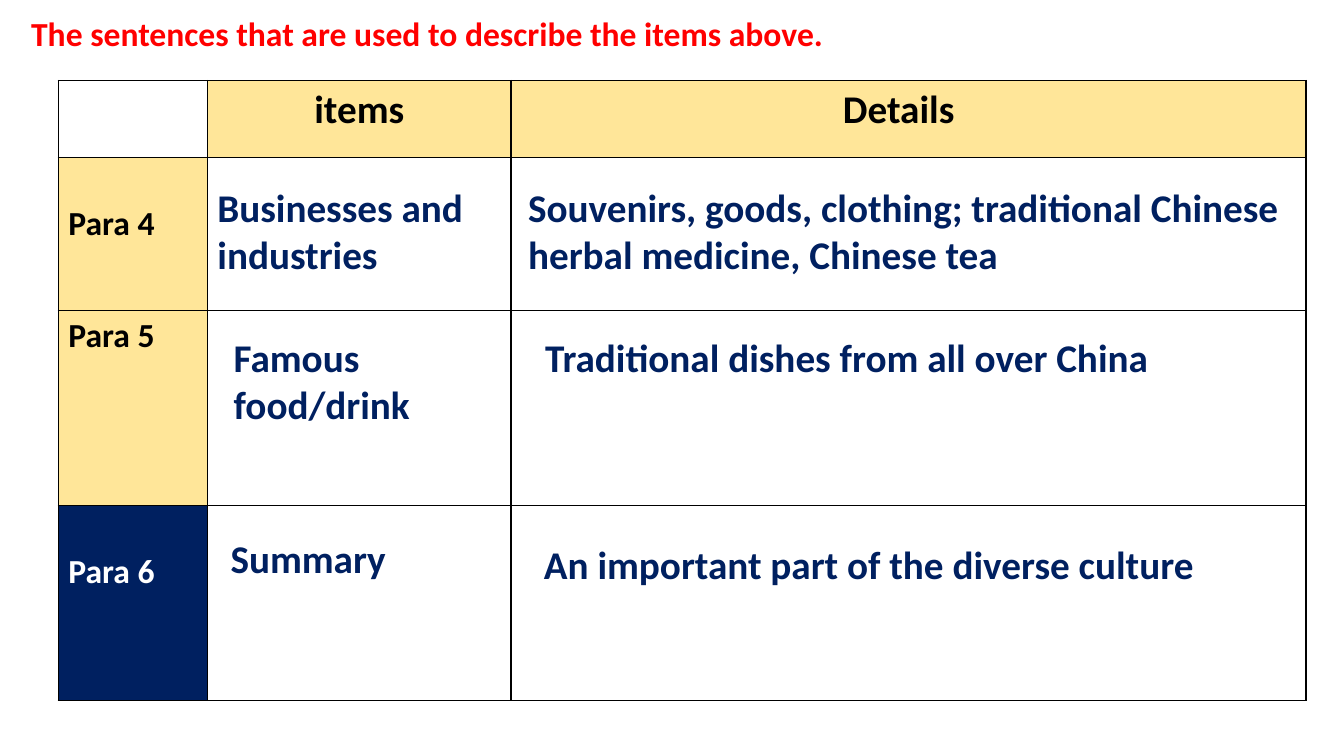
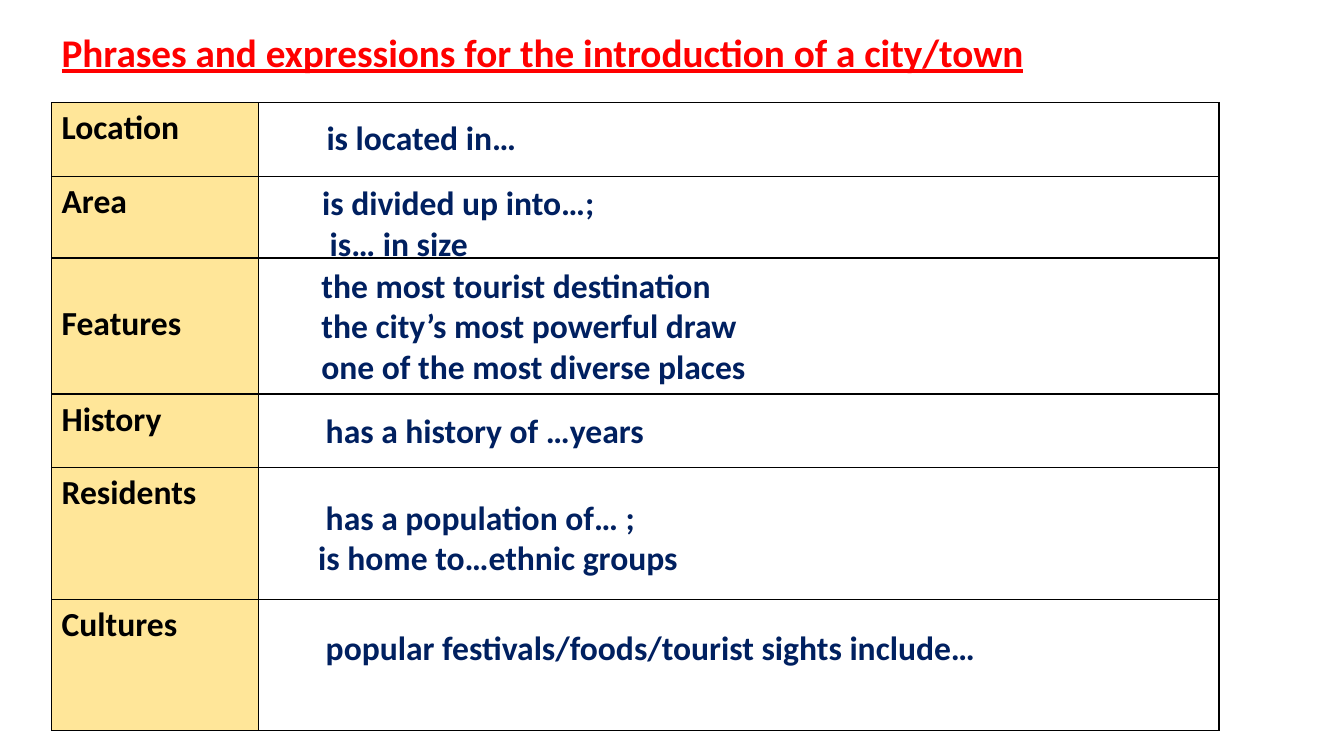
from itertools import product

from lxml.etree import SubElement
from pptx import Presentation
from pptx.dml.color import RGBColor
from pptx.enum.text import MSO_ANCHOR as Anchor
from pptx.enum.text import MSO_AUTO_SIZE as Fit
from pptx.enum.text import PP_ALIGN as Align
from pptx.oxml.ns import qn
from pptx.util import Cm, Pt

RED = RGBColor(0xFF, 0x00, 0x00)
NAVY = RGBColor(0x00, 0x20, 0x60)
SAND = RGBColor(0xFF, 0xE6, 0x99)
BLACK = RGBColor(0x00, 0x00, 0x00)
WHITE = RGBColor(0xFF, 0xFF, 0xFF)
FONT = "Calibri"
DROP = 1.16


def write(frame, text, size=24, color=NAVY, align=Align.LEFT, line=False, shifts=()):
    frame.word_wrap = True
    for i, words in enumerate(text.split("\n")):
        para = frame.paragraphs[0] if i == 0 else frame.add_paragraph()
        para.alignment = align
        if i < len(shifts):
            para._p.get_or_add_pPr().set("marL", str(Cm(shifts[i])))
        run = para.add_run()
        run.text = words
        font = run.font
        font.name, font.size, font.bold = FONT, Pt(size), True
        font.underline = line
        font.color.rgb = color


def add_title(slide, box, text, **style):
    title = slide.shapes.title
    title.left, title.top, title.width, title.height = map(Cm, box)
    frame = title.text_frame
    frame.auto_size = Fit.NONE
    frame.vertical_anchor = Anchor.TOP
    write(frame, text, color=RED, **style)


def add_edges(cell):
    props = cell._tc.get_or_add_tcPr()
    for side in ("lnL", "lnR", "lnT", "lnB"):
        edge = SubElement(props, qn("a:" + side), w=str(Pt(1)))
        fill = SubElement(edge, qn("a:solidFill"))
        SubElement(fill, qn("a:srgbClr"), val=str(BLACK))


def add_grid(slide, left, top, cols, rows):
    size = map(Cm, (left, top, sum(cols), sum(rows)))
    grid = slide.shapes.add_table(len(rows), len(cols), *size).table
    grid.first_row = grid.horz_banding = False
    for col, width in zip(grid.columns, cols):
        col.width = Cm(width)
    for row, height in zip(grid.rows, rows):
        row.height = Cm(height)
    for r, c in product(range(len(rows)), range(len(cols))):
        cell = grid.cell(r, c)
        add_edges(cell)
        cell.fill.background()
    return grid


def add_label(cell, text, fill=SAND, drop=0, **style):
    cell.fill.solid()
    cell.fill.fore_color.rgb = fill
    cell.margin_top = Cm(drop)
    write(cell.text_frame, text, **{"color": BLACK, **style})


def add_notes(slide, left, top, notes, size):
    for x, y, width, height, text, *shifts in notes:
        box = slide.shapes.add_textbox(Cm(left + x), Cm(top + y), Cm(width), Cm(height))
        write(box.text_frame, text, size=size, shifts=shifts)
        box.text_frame.auto_size = Fit.SHAPE_TO_FIT_TEXT


def add_items(slide, left, top):
    add_title(slide, (0.53, 0.2, 26.26, 1.27),
              "The sentences that are used to describe the items above.")
    grid = add_grid(slide, left, top, (3.76, 7.65, 20.03), (1.93, 3.86, 4.91, 4.92))
    for col, text in enumerate(("items", "Details"), 1):
        add_label(grid.cell(0, col), text, drop=0.13, size=28, align=Align.CENTER)
    grid.cell(0, 2).margin_right = Cm(0.75)
    add_label(grid.cell(1, 0), "Para 4", drop=DROP)
    add_label(grid.cell(2, 0), "Para 5", drop=0.13)
    add_label(grid.cell(3, 0), "Para 6", drop=DROP, fill=NAVY, color=WHITE)
    add_notes(slide, left, top, (
        (3.76, 2.47, 7.52, 2.64, "Businesses and industries"),
        (11.59, 2.47, 20.04, 2.64,
         "Souvenirs, goods, clothing; traditional Chinese herbal medicine, Chinese tea"),
        (4.17, 6.25, 6.83, 2.64, "Famous food/drink"),
        (12.02, 6.25, 17.98, 1.45, "Traditional dishes from all over China"),
        (4.09, 11.31, 6.83, 1.45, "Summary"),
        (11.99, 11.46, 18.06, 1.45, "An important part of the diverse culture"),
    ), 28)


def add_phrases(slide, left, top):
    add_title(slide, (left, 0.58, 31.04, 1.45),
              "Phrases and expressions for the introduction of a city/town",
              size=28, line=True)
    grid = add_grid(slide, left, top, (5.21, 24.21), (1.85, 2.06, 3.43, 1.85, 3.33, 3.3))
    names = ("Location", "Area", "Features", "History", "Residents", "Cultures")
    for row, name in enumerate(names):
        add_label(grid.cell(row, 0), name, drop=DROP if name == "Features" else 0.13)
    add_notes(slide, left, top, (
        (6.68, 0.23, 16.26, 1.27, "is located in…"),
        (6.57, 1.88, 16.26, 2.31, "is divided up into…;\nis… in size", 0, 0.19),
        (6.55, 3.96, 16.26, 3.33,
         "the most tourist destination\nthe city’s most powerful draw\n"
         "one of the most diverse places"),
        (6.47, 7.62, 16.26, 1.27, "has a history of …years", 0.19),
        (6.47, 9.81, 20.75, 2.31,
         "has a population of… ;\nis home to…ethnic groups", 0.19),
        (6.47, 13.08, 20.75, 1.27,
         "popular festivals/foods/tourist sights include…", 0.19),
    ), 24)


def main():
    deck = Presentation()
    deck.slide_width, deck.slide_height = Cm(33.87), Cm(19.05)
    layout = deck.slide_layouts[5]
    add_items(deck.slides.add_slide(layout), 1.47, 2.03)
    add_phrases(deck.slides.add_slide(layout), 1.3, 2.59)
    deck.save("out.pptx")


if __name__ == "__main__":
    main()
